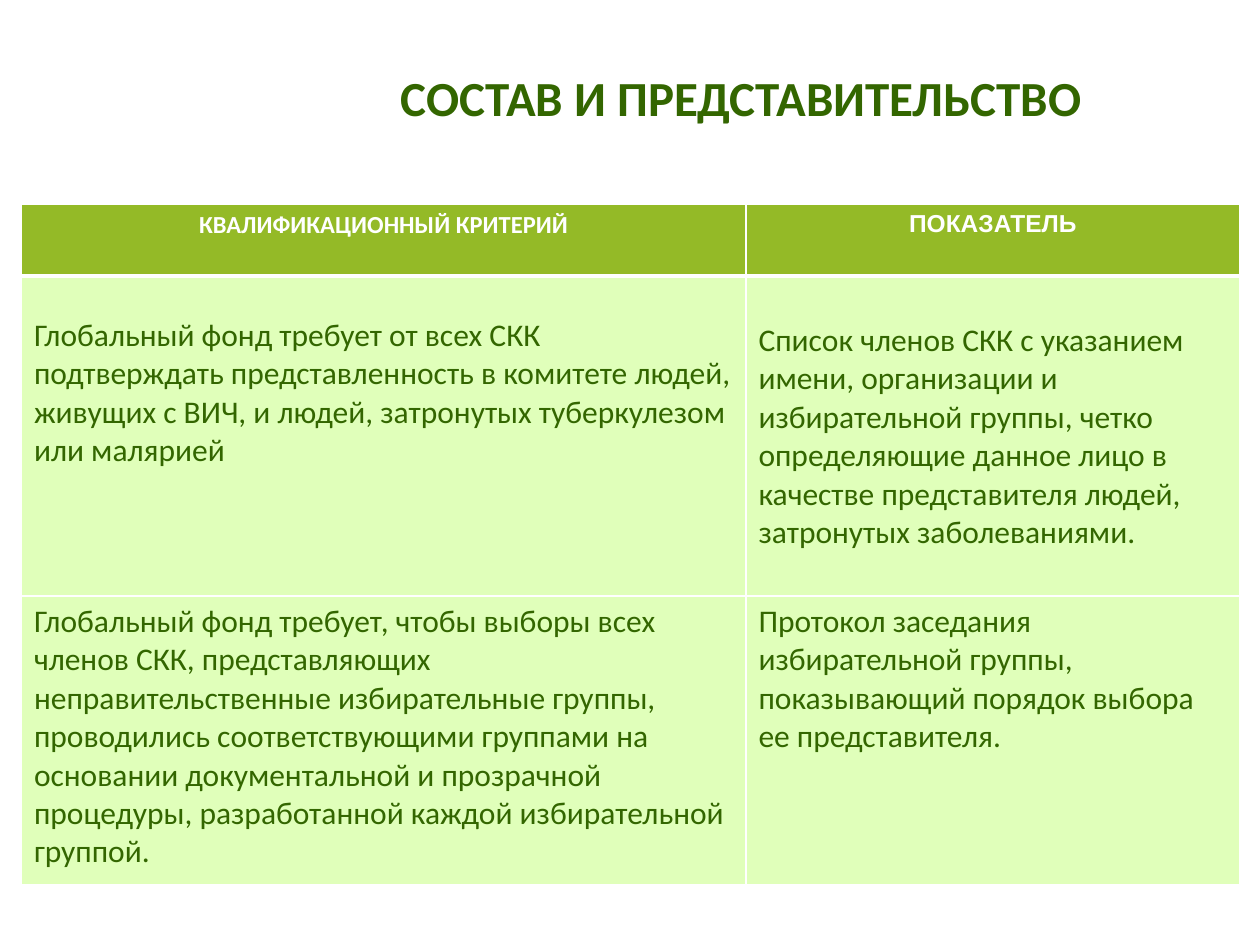
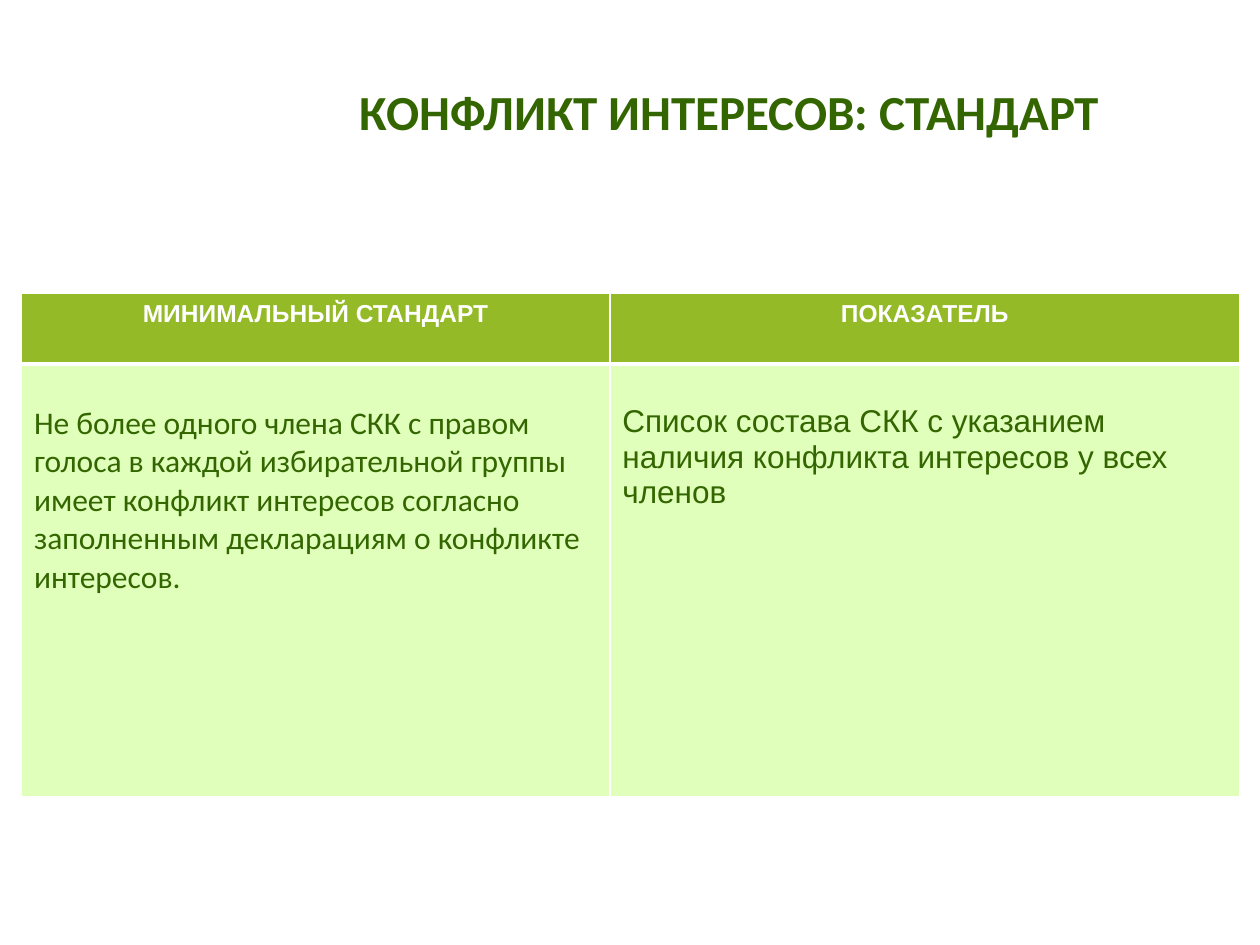
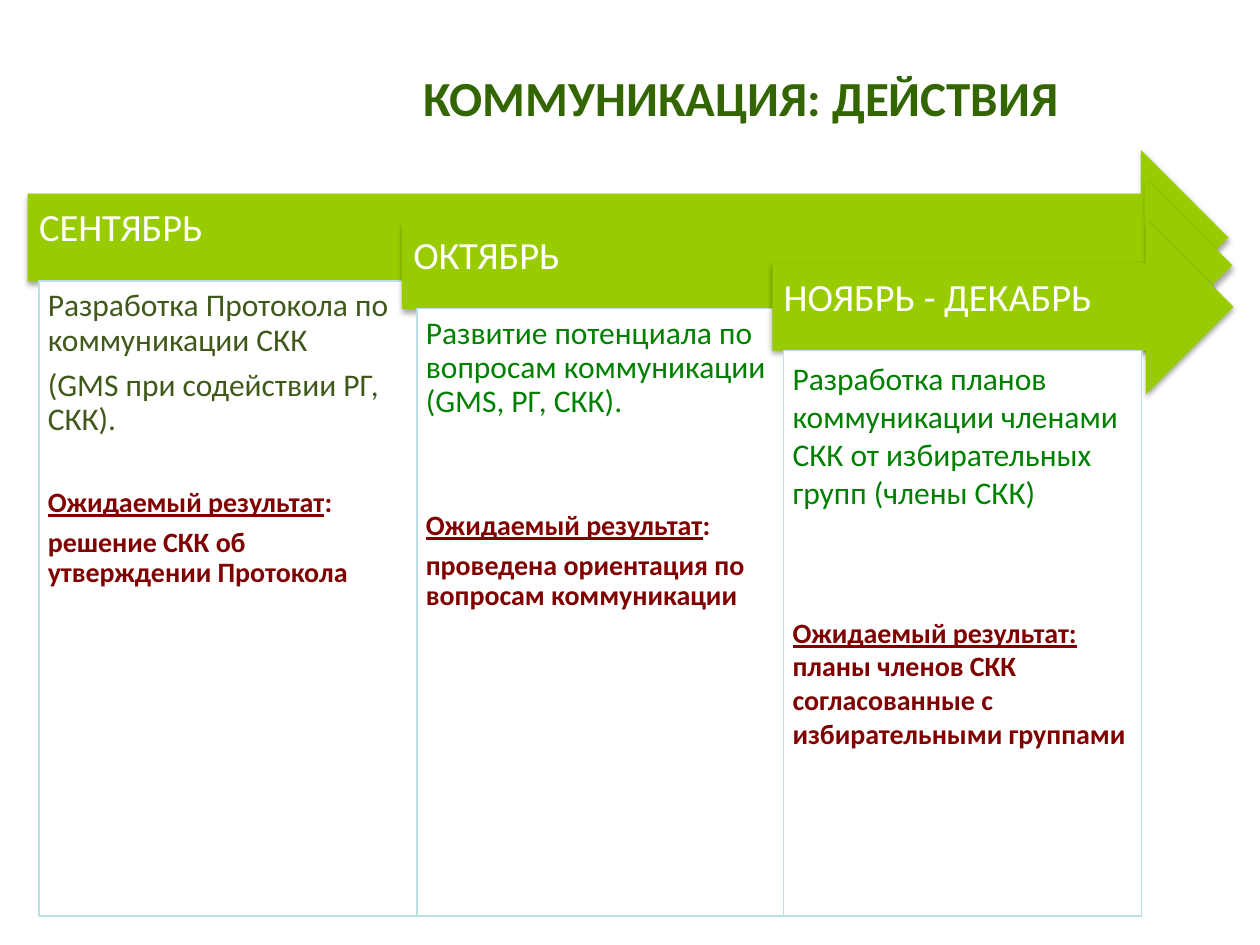
from dataclasses import dataclass

from lxml import etree
from pptx import Presentation
from pptx.dml.color import RGBColor
from pptx.enum.shapes import MSO_SHAPE
from pptx.enum.text import MSO_ANCHOR, MSO_AUTO_SIZE, PP_ALIGN
from pptx.oxml.ns import qn
from pptx.util import Inches, Pt

ARROW, RECTANGLE = MSO_SHAPE.RIGHT_ARROW, MSO_SHAPE.RECTANGLE
TOP, MIDDLE = MSO_ANCHOR.TOP, MSO_ANCHOR.MIDDLE
LEFT, CENTER = PP_ALIGN.LEFT, PP_ALIGN.CENTER
NO_AUTOFIT = MSO_AUTO_SIZE.NONE
TITLE_ONLY = 5
CALIBRI, ARIAL = "Calibri", "Arial"


@dataclass(frozen=True)
class Theme:
    ink: str = "336600"
    white: str = "FFFFFF"
    header: str = "94BA27"
    body: str = "E0FFBA"
    arrow: str = "99CC00"
    panel_line: str = "BBE0E3"
    olive: str = "40591B"
    green: str = "008000"
    result: str = "800000"
    shadow: str = "000000"
    title_size: int = 28
    month_size: int = 22
    text_size: int = 18
    result_size: int = 16
    header_size: int = 14


THEME = Theme()
SLIDE_W, SLIDE_H = 10, 7.5
MARGIN = 0.17
CELL_TOP = 0.05

# Table cells: text, font, top margin
TABLE_SLIDES = [
    {
        "title": "СОСТАВ И ПРЕДСТАВИТЕЛЬСТВО",
        "title_box": (1.92, MARGIN, 7.92, 1.2),
        "top": 1.62,
        "columns": (5.75, 3.92),
        "heights": (0.57, 2.54, 2.29),
        "rows": [
            [("КВАЛИФИКАЦИОННЫЙ КРИТЕРИЙ", CALIBRI, CELL_TOP),
             ("ПОКАЗАТЕЛЬ", ARIAL, CELL_TOP)],
            [("Глобальный фонд требует от всех СКК подтверждать представленность "
              "в комитете людей, живущих с ВИЧ, и людей, затронутых туберкулезом "
              "или малярией", CALIBRI, 0.32),
             ("Список членов СКК с указанием имени, организации и избирательной "
              "группы, четко определяющие данное лицо в качестве представителя "
              "людей, затронутых заболеваниями.", CALIBRI, 0.36)],
            [("Глобальный фонд требует, чтобы выборы всех членов СКК, "
              "представляющих неправительственные избирательные группы, "
              "проводились соответствующими группами на основании документальной "
              "и прозрачной процедуры, разработанной каждой избирательной "
              "группой.", CALIBRI, CELL_TOP),
             ("Протокол заседания избирательной группы, показывающий порядок "
              "выбора ее представителя.", CALIBRI, CELL_TOP)],
        ],
    },
    {
        "title": "КОНФЛИКТ ИНТЕРЕСОВ: СТАНДАРТ",
        "title_box": (1.75, MARGIN, 8.08, 1.42),
        "top": 2.33,
        "columns": (4.67, 5),
        "heights": (0.56, 3.43),
        "rows": [
            [("МИНИМАЛЬНЫЙ СТАНДАРТ", ARIAL, CELL_TOP),
             ("ПОКАЗАТЕЛЬ", ARIAL, CELL_TOP)],
            [("Не более одного члена СКК с правом голоса в каждой избирательной "
              "группы имеет конфликт интересов согласно заполненным декларациям "
              "о конфликте интересов.", CALIBRI, 0.32),
             ("Список состава СКК с указанием наличия конфликта интересов у всех "
              "членов", ARIAL, 0.32)],
        ],
    },
]

TIMELINE_TITLE = "КОММУНИКАЦИЯ: ДЕЙСТВИЯ"
TIMELINE_TITLE_BOX = TABLE_SLIDES[0]["title_box"]
RESULT_LABEL = "Ожидаемый результат"
STAGES = [
    {"month": "СЕНТЯБРЬ", "arrow": (0.22, 1.19, 9.75), "panel_left": 0.31,
     "actions": ["Разработка Протокола по коммуникации СКК",
                 "(GMS при содействии РГ, СКК)."],
     "result": "решение СКК об утверждении Протокола",
     "color": THEME.olive, "result_gap": 23, "line": 0.9, "after": 0.35,
     "underline_colon": False},
    {"month": "ОКТЯБРЬ", "arrow": (3.19, 1.41, 9.78), "panel_left": 3.31,
     "actions": ["Развитие потенциала по вопросам коммуникации (GMS, РГ, СКК)."],
     "result": "проведена ориентация по вопросам коммуникации",
     "color": THEME.green, "result_gap": 46, "line": 0.9, "after": 0.35,
     "underline_colon": False},
    {"month": "НОЯБРЬ - ДЕКАБРЬ", "arrow": (6.13, 1.74, 9.79), "panel_left": 6.22,
     "actions": ["Разработка планов коммуникации членами СКК от избирательных "
                 "групп (члены СКК)"],
     "result": "планы членов СКК согласованные с избирательными группами",
     "color": THEME.green, "result_gap": 60, "line": 1.0, "after": 0,
     "underline_colon": True},
]
ARROW_H = 1.39
PANEL_DROP = 1.04
PANELS_RIGHT, PANELS_BOTTOM = 9.06, 7.27


def rgb(color):
    return RGBColor.from_string(color)


def apply(target, values):
    for name, value in values.items():
        setattr(target, name, value)


def style_font(font, size, color, name=CALIBRI, bold=False, underline=False):
    apply(font, {"size": Pt(size), "name": name, "bold": bold,
                 "underline": underline})
    font.color.rgb = rgb(color)


def format_frame(frame, anchor, insets):
    """Set the anchor and the left, top, right and bottom insets in inches."""
    sides = ("margin_left", "margin_top", "margin_right", "margin_bottom")
    apply(frame, {"word_wrap": True, "auto_size": NO_AUTOFIT,
                  "vertical_anchor": anchor})
    apply(frame, dict(zip(sides, map(Inches, insets))))


def add_titled_slide(prs, text, box):
    slide = prs.slides.add_slide(prs.slide_layouts[TITLE_ONLY])
    title = slide.shapes.title
    apply(title, dict(zip(("left", "top", "width", "height"), map(Inches, box))))
    format_frame(title.text_frame, MIDDLE, (0.1, 0.05, 0.1, 0.05))
    title.text_frame.text = text
    paragraph = title.text_frame.paragraphs[0]
    paragraph.alignment = CENTER
    style_font(paragraph.font, THEME.title_size, THEME.ink, bold=True)
    return slide


def add_borders(cell, bottom):
    """Draw white cell edges, with the bottom one of the given width."""
    properties = cell._tc.get_or_add_tcPr()
    widths = {"a:lnL": 1, "a:lnR": 1, "a:lnT": 1, "a:lnB": bottom}
    for position, (tag, width) in enumerate(widths.items()):
        edge = etree.Element(qn(tag), w=str(Pt(width)))
        fill = etree.SubElement(edge, qn("a:solidFill"))
        etree.SubElement(fill, qn("a:srgbClr"), val=THEME.white)
        properties.insert(position, edge)


def fill_cell(cell, content, is_header):
    text, font_name, top = content
    cell.text = text
    apply(cell, {"vertical_anchor": TOP, "margin_top": Inches(top)})
    cell.fill.solid()
    cell.fill.fore_color.rgb = rgb(THEME.header if is_header else THEME.body)
    paragraph = cell.text_frame.paragraphs[0]
    paragraph.alignment = CENTER if is_header else LEFT
    style_font(paragraph.font,
               THEME.header_size if is_header else THEME.text_size,
               THEME.white if is_header else THEME.ink, font_name, is_header)
    add_borders(cell, bottom=3 if is_header else 1)


def add_criteria_table(slide, content):
    rows, columns, heights = (content[k] for k in ("rows", "columns", "heights"))
    table = slide.shapes.add_table(
        len(rows), len(columns), Inches(MARGIN), Inches(content["top"]),
        Inches(sum(columns)), Inches(sum(heights))).table
    table.horz_banding = False
    for column, width in zip(table.columns, columns):
        column.width = Inches(width)
    for index, (row, height, cells) in enumerate(zip(table.rows, heights, rows)):
        row.height = Inches(height)
        for cell, cell_content in zip(row.cells, cells):
            fill_cell(cell, cell_content, is_header=index == 0)


def add_block(slide, kind, box, color):
    block = slide.shapes.add_shape(kind, *map(Inches, box))
    block.shadow.inherit = False
    block.fill.solid()
    block.fill.fore_color.rgb = rgb(color)
    block.line.fill.background()
    return block


def add_soft_shadow(block):
    effects = block._element.spPr.find(qn("a:effectLst"))
    shadow = etree.SubElement(
        effects, qn("a:outerShdw"), blurRad=str(Pt(3.1)), dist=str(Pt(1.8)),
        dir="5400000", rotWithShape="0")
    color = etree.SubElement(shadow, qn("a:srgbClr"), val=THEME.shadow)
    etree.SubElement(color, qn("a:alpha"), val="35000")


def add_month_arrow(slide, stage):
    left, top, right = stage["arrow"]
    arrow = add_block(slide, ARROW, (left, top, right - left, ARROW_H), THEME.arrow)
    add_soft_shadow(arrow)
    format_frame(arrow.text_frame, MIDDLE, (0.09, 0.09, 0.28, 0.22))
    paragraph = arrow.text_frame.paragraphs[0]
    paragraph.text = stage["month"]
    apply(paragraph, {"alignment": LEFT, "line_spacing": 0.9})
    style_font(paragraph.font, THEME.month_size, THEME.white)


def add_stage_panel(slide, stage, right):
    left, top = stage["panel_left"], stage["arrow"][1] + PANEL_DROP
    panel = add_block(slide, RECTANGLE,
                      (left, top, right - left, PANELS_BOTTOM - top), THEME.white)
    panel.line.color.rgb = rgb(THEME.panel_line)
    panel.line.width = Pt(0.75)
    frame = panel.text_frame
    format_frame(frame, TOP, (0.07,) * 4)

    # Paragraphs: runs as (text, underlined), size, colour, bold, space before
    result_style = (THEME.result_size, THEME.result, True)
    label = [(RESULT_LABEL, True), (":", stage["underline_colon"])]
    paragraphs = [([(action, False)], THEME.text_size, stage["color"], False, 0)
                  for action in stage["actions"]]
    paragraphs += [(label, *result_style, stage["result_gap"]),
                   ([(stage["result"], False)], *result_style, 0)]
    for index, (runs, size, color, bold, before) in enumerate(paragraphs):
        paragraph = frame.add_paragraph() if index else frame.paragraphs[0]
        apply(paragraph, {"alignment": LEFT, "line_spacing": stage["line"],
                          "space_after": Pt(size * stage["after"])})
        if before:
            paragraph.space_before = Pt(before)
        for text, underlined in runs:
            run = paragraph.add_run()
            run.text = text
            style_font(run.font, size, color, bold=bold, underline=underlined)


def main():
    prs = Presentation()
    prs.slide_width, prs.slide_height = Inches(SLIDE_W), Inches(SLIDE_H)
    for content in TABLE_SLIDES:
        slide = add_titled_slide(prs, content["title"], content["title_box"])
        add_criteria_table(slide, content)

    timeline = add_titled_slide(prs, TIMELINE_TITLE, TIMELINE_TITLE_BOX)
    panel_rights = [stage["panel_left"] for stage in STAGES[1:]] + [PANELS_RIGHT]
    for stage, right in zip(STAGES, panel_rights):
        add_month_arrow(timeline, stage)
        add_stage_panel(timeline, stage, right)
    prs.save("out.pptx")


if __name__ == "__main__":
    main()
